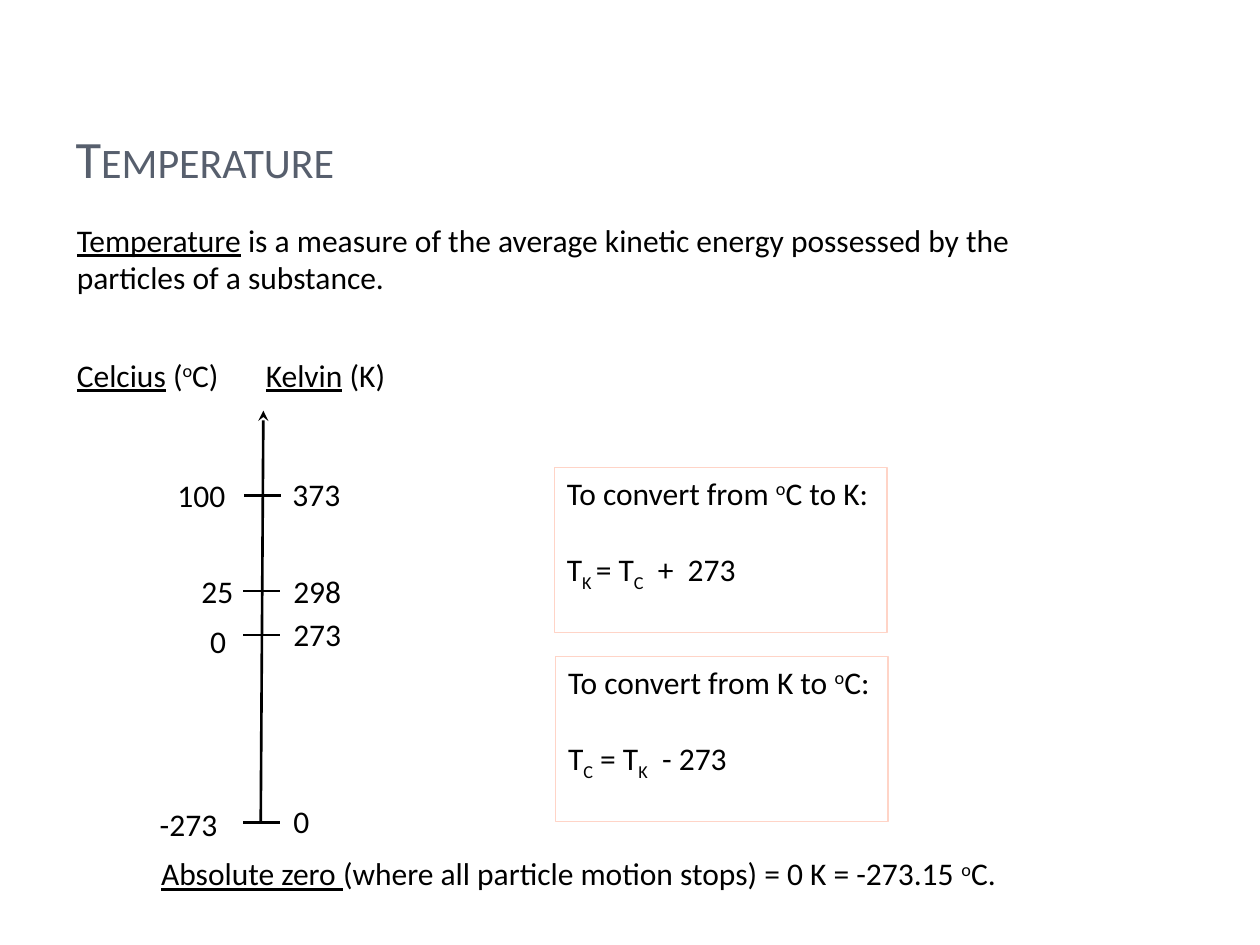
import pptx
import pptx.dml.color
import pptx.enum.shapes
import pptx.enum.text
import pptx.oxml.ns
import pptx.util
from lxml import etree

Pt = pptx.util.Pt
qn = pptx.oxml.ns.qn
ANCHOR = pptx.enum.text.MSO_ANCHOR
COLORS = {"title": "575F6D", "text": "000000", "line": "000000", "box": "FFD4C7"}
# Kinds of run: plain, underlined, superscript, subscript
PLAIN, UNDER, SUP, SUB = "plain", "under", "sup", "sub"
BASELINES = {SUP: "30000", SUB: "-25000"}


def rgb(name):
    return pptx.dml.color.RGBColor.from_string(COLORS[name])


class SlideBuilder:
    font = "Calibri"
    size = 18

    def __init__(self, s):
        self.s = s

    def add_run(self, p, text, kind=PLAIN, size=None, color="text"):
        r = p.add_run()
        r.text = text
        r.font.name = self.font
        r.font.size = Pt(size or self.size)
        r.font.color.rgb = rgb(color)
        if kind == UNDER:
            r.font.underline = True
        if kind in BASELINES:
            r._r.get_or_add_rPr().set("baseline", BASELINES[kind])
        return r

    def fill_text(self, tf, paragraphs, anchor=ANCHOR.TOP, wrap=True):
        """Write (space before, runs) pairs as left-aligned paragraphs."""
        tf.word_wrap = wrap
        tf.auto_size = pptx.enum.text.MSO_AUTO_SIZE.NONE
        tf.vertical_anchor = anchor
        for i, (space, runs) in enumerate(paragraphs):
            p = tf.add_paragraph() if i else tf.paragraphs[0]
            p.alignment = pptx.enum.text.PP_ALIGN.LEFT
            p.space_before = Pt(space)
            for text, kind in runs:
                self.add_run(p, text, kind)

    def place(self, sp, x, y, w, h):
        sp.left, sp.top, sp.width, sp.height = Pt(x), Pt(y), Pt(w), Pt(h)

    def title(self, text, *box):
        sp = self.s.shapes.title
        self.place(sp, *box)
        self.fill_text(sp.text_frame, [(0, [])], ANCHOR.BOTTOM)
        r = self.add_run(sp.text_frame.paragraphs[0], text, size=30, color="title")
        r._r.get_or_add_rPr().set("cap", "small")

    def body(self, paragraphs, *box):
        sp = self.s.placeholders[1]
        self.place(sp, *box)
        self.fill_text(sp.text_frame, paragraphs)
        for p in sp.text_frame.paragraphs:
            pPr = p._p.get_or_add_pPr()
            pPr.set("marL", "0")
            pPr.set("indent", "0")
            etree.SubElement(pPr, qn("a:buNone"))

    def label(self, runs, x, y, w, h=29, wrap=False):
        sp = self.s.shapes.add_textbox(Pt(x), Pt(y), Pt(w), Pt(h))
        self.fill_text(sp.text_frame, [(0, runs)], wrap=wrap)

    def box(self, paragraphs, x, y, w, h):
        sp = self.s.shapes.add_shape(
            pptx.enum.shapes.MSO_SHAPE.RECTANGLE, Pt(x), Pt(y), Pt(w), Pt(h))
        sp.shadow.inherit = False
        sp.fill.background()
        sp.line.color.rgb = rgb("box")
        sp.line.width = Pt(0.75)
        self.fill_text(sp.text_frame, paragraphs)

    def line(self, x1, y1, x2, y2, arrow=False):
        c = self.s.shapes.add_connector(
            pptx.enum.shapes.MSO_CONNECTOR.STRAIGHT, Pt(x1), Pt(y1), Pt(x2), Pt(y2))
        c.line.color.rgb = rgb("line")
        c.line.width = Pt(1.5)
        if arrow:
            etree.SubElement(c.line._get_or_add_ln(), qn("a:tailEnd"), type="stealth")
        etree.SubElement(c._element.spPr, qn("a:effectLst"))


def main():
    prs = pptx.Presentation()
    prs.slide_width, prs.slide_height = Pt(720), Pt(540)
    b = SlideBuilder(prs.slides.add_slide(prs.slide_layouts[1]))

    # Title, definition and scale headings
    b.title("Temperature", 36, 21.6, 588, 90)
    b.body([
        (6, [("Temperature", UNDER),
             (" is a measure of the average kinetic energy possessed by the "
              "particles of a substance.", PLAIN)]),
        (34, [("Celcius", UNDER), (" (", PLAIN), ("o", SUP), ("C)\t", PLAIN),
              ("Kelvin", UNDER), (" (K)", PLAIN)]),
    ], 36.7, 122.4, 588, 106)

    # Thermometer axis
    b.line(149, 470, 150.5, 234.7, arrow=True)

    # Ticks: y, tick x, then (text, x, top, width) for Celsius and Kelvin
    ticks = [
        (283, 139.7, ("100", 94.3, 268.6, 42.5), ("373", 160, 268, 42.5)),
        (337.7, 139, ("25", 108, 323.3, 33), ("298", 160.5, 323.3, 42.5)),
        (362.9, 139, ("0", 113, 352, 24), ("273", 160.5, 348, 42.5)),
        (470, 139, ("-273", 84.2, 456.5, 51), ("0", 160.5, 455, 24)),
    ]
    for y, x, *labels in ticks:
        b.line(x, y, x + 21, y)
        for text, left, top, width in labels:
            b.label([(text, PLAIN)], left, top, width)

    # Conversion boxes
    conversions = [
        (316.8, 267.1,
         [("To convert from ", PLAIN), ("o", SUP), ("C to K:", PLAIN)],
         [("T", PLAIN), ("K ", SUB), ("= T", PLAIN), ("C", SUB), ("  +  273", PLAIN)]),
        (317.5, 375.1,
         [("To convert from K to ", PLAIN), ("o", SUP), ("C:", PLAIN)],
         [("T", PLAIN), ("C", SUB), (" = T", PLAIN), ("K", SUB), ("  - 273", PLAIN)]),
    ]
    for x, y, heading, formula in conversions:
        b.box([(0, heading), (22, formula)], x, y, 190, 94.3)

    # Absolute zero
    b.label([("Absolute zero ", UNDER),
             ("(where all particle motion stops) = 0 K = -273.15 ", PLAIN),
             ("o", SUP), ("C.", PLAIN)], 85, 484.6, 498, wrap=True)

    prs.save("out.pptx")


if __name__ == "__main__":
    main()
